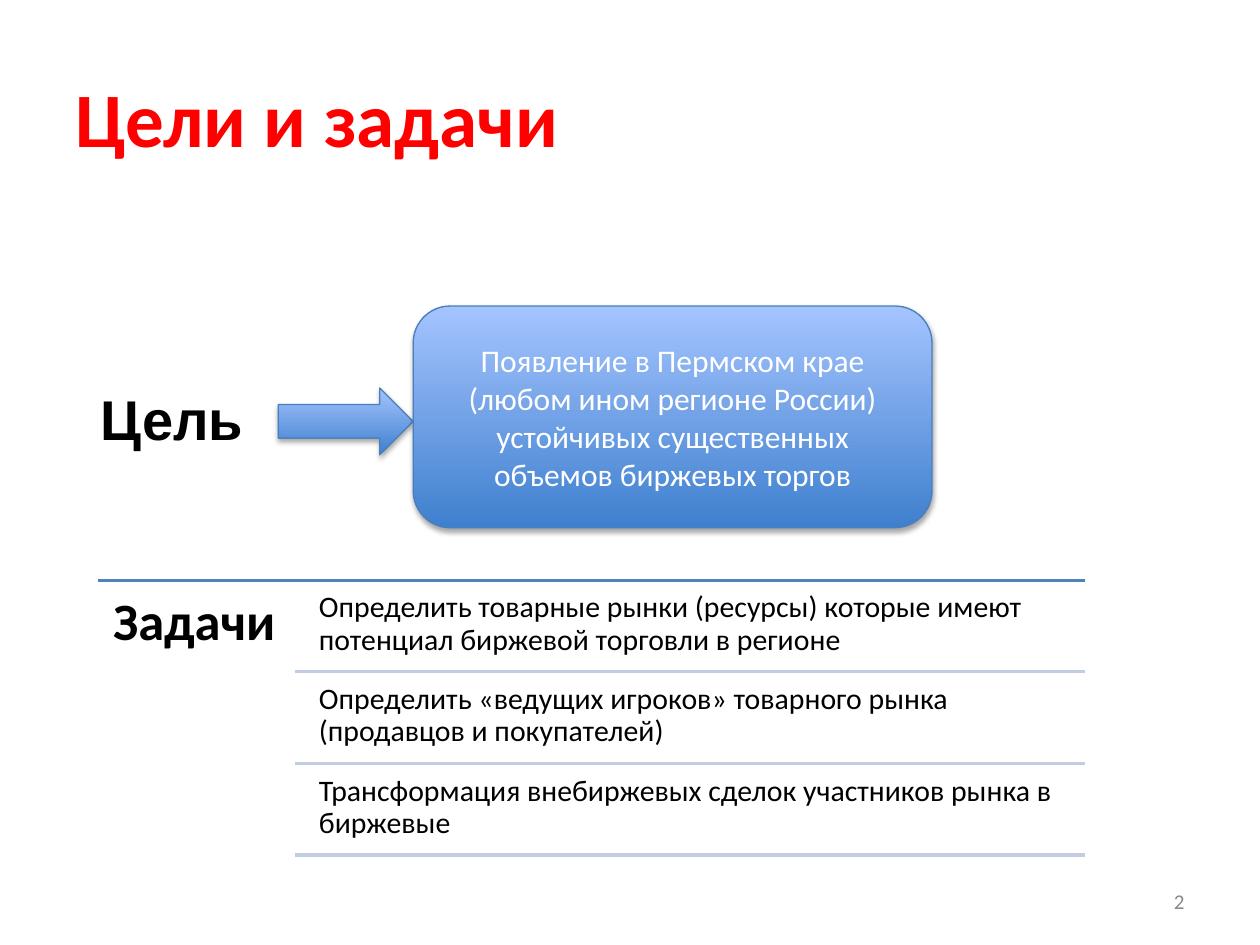
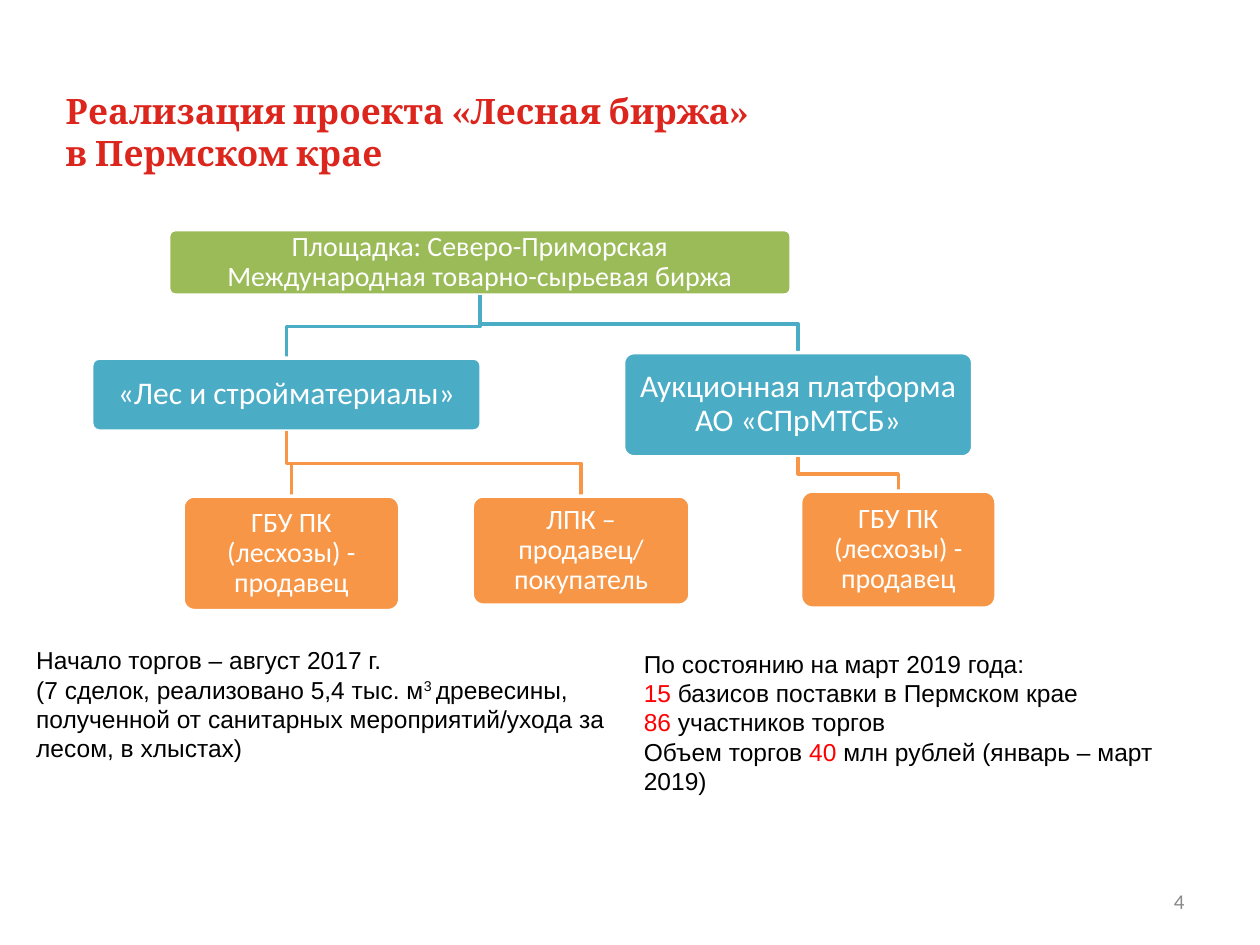
from lxml.etree import SubElement
from pptx import Presentation
from pptx.dml.color import RGBColor
from pptx.enum.shapes import MSO_CONNECTOR as Connector, MSO_SHAPE as Shape
from pptx.enum.text import MSO_ANCHOR as Anchor, PP_ALIGN as Align
from pptx.oxml.ns import qn
from pptx.util import Cm, Pt

RED = RGBColor(0xFF, 0x00, 0x00)
CRIMSON = RGBColor(0xDB, 0x25, 0x1D)
BLACK = RGBColor(0x00, 0x00, 0x00)
WHITE = RGBColor(0xFF, 0xFF, 0xFF)
GRAY = RGBColor(0x89, 0x89, 0x89)
BLUE = RGBColor(0x4F, 0x81, 0xBD)
PALE_BLUE = RGBColor(0xC2, 0xCD, 0xE1)
OUTLINE_BLUE = RGBColor(0x4B, 0x7E, 0xBC)
GRADIENT = RGBColor(0x3F, 0x80, 0xCE), RGBColor(0xA4, 0xC4, 0xFF)
GREEN = RGBColor(0x9B, 0xBB, 0x59)
TEAL = RGBColor(0x4B, 0xAC, 0xC6)
ORANGE = RGBColor(0xF7, 0x96, 0x46)

GOAL = ("Появление в Пермском крае (любом ином регионе России) "
        "устойчивых существенных объемов биржевых торгов")
TASKS = [
    "Определить товарные рынки (ресурсы) которые имеют потенциал биржевой торговли в регионе",
    "Определить «ведущих игроков» товарного рынка (продавцов и покупателей)",
    "Трансформация внебиржевых сделок участников рынка в биржевые",
]
TASK_PITCH = 1.85

SELLER = "ГБУ ПК (лесхозы) - продавец"
EXCHANGE_TREE = (
    "Площадка: Северо-Приморская\vМеждународная товарно-сырьевая биржа",
    (3.4, 4.63, 12.55, 1.32), GREEN, 16, [
        ("«Лес и стройматериалы»", (1.85, 7.22, 7.85, 1.47), TEAL, 18, [
            (SELLER, (3.69, 10, 4.37, 2.31), ORANGE, 16, []),
            ("ЛПК – продавец/\vпокупатель", (9.52, 10, 4.39, 2.2), ORANGE, 16, []),
        ]),
        ("Аукционная платформа\vАО «СПрМТСБ»", (12.57, 7.11, 7.04, 2.1), TEAL, 18, [
            (SELLER, (16.14, 9.9, 3.94, 2.36), ORANGE, 16, []),
        ]),
    ])

START_NOTE = [
    [("Начало торгов – август 2017 г.", "plain")],
    [("(7 сделок, реализовано 5,4 тыс. м", "plain"), ("3 ", "raised"),
     ("древесины, полученной от санитарных мероприятий/ухода за лесом, в хлыстах)", "plain")],
]
STATUS_NOTE = [
    [("По состоянию на март 2019 года:", "plain")],
    [("15", "red"), (" базисов поставки в Пермском крае", "plain")],
    [("86", "red"), (" участников торгов", "plain")],
    [("Объем торгов ", "plain"), ("40 ", "red"), ("млн рублей (январь – март 2019)", "plain")],
]


def cm_all(*lengths):
    return [Cm(length) for length in lengths]


def write(holder, text, size, color, font="Calibri", bold=False,
          align=Align.LEFT, anchor=Anchor.TOP, spacing=None, inset=None):
    frame = holder.text_frame
    frame.word_wrap = True
    frame.vertical_anchor = anchor
    if inset is not None:
        frame.margin_left = frame.margin_right = Cm(inset)
        frame.margin_top = frame.margin_bottom = Cm(inset)
    para = frame.paragraphs[0]
    para.text = text
    para.alignment = align
    para.line_spacing = spacing
    para.font.name, para.font.size = font, Pt(size)
    para.font.bold = bold
    para.font.color.rgb = color


def add_text(page, place, text, size, color, **style):
    write(page.shapes.add_textbox(*cm_all(*place)), text, size, color, **style)


def add_page(deck, number, title, place, size, color, font):
    page = deck.slides.add_slide(deck.slide_layouts[5])
    heading = page.shapes.title
    heading.left, heading.top, heading.width, heading.height = cm_all(*place)
    write(heading, title, size, color, font=font, bold=True, anchor=Anchor.MIDDLE)
    add_text(page, (18.21, 17.65, 5.92, 1.02), number, 12, GRAY,
             align=Align.RIGHT, anchor=Anchor.MIDDLE)
    return page


def add_rule(page, left, right, top, color):
    rule = page.shapes.add_connector(Connector.STRAIGHT, *cm_all(left, top, right, top))
    rule.line.color.rgb = color
    rule.line.width = Pt(2)
    SubElement(rule._element.spPr, qn("a:effectLst"))


def add_glossy(page, kind, place):
    shape = page.shapes.add_shape(kind, *cm_all(*place))
    shape.fill.gradient()
    shape.fill.gradient_angle = 90
    for stop, color in zip(shape.fill.gradient_stops, GRADIENT):
        stop.color.rgb = color
    shape.line.color.rgb = OUTLINE_BLUE
    shape.line.width = Pt(0.75)
    shape.shadow.inherit = False
    effects = shape._element.spPr.find(qn("a:effectLst"))
    shadow = SubElement(effects, qn("a:outerShdw"), blurRad="40000", dist="23000",
                        dir="5400000", rotWithShape="0")
    tint = SubElement(shadow, qn("a:srgbClr"), val="000000")
    SubElement(tint, qn("a:alpha"), val="35000")
    return shape


def add_branch(page, parent, place, color):
    left, top, width, _ = cm_all(*place)
    start_x, start_y = parent.left + parent.width // 2, parent.top + parent.height
    end_x, middle_y = left + width // 2, (start_y + top) // 2
    builder = page.shapes.build_freeform(start_x, start_y)
    builder.add_line_segments([(start_x, middle_y), (end_x, middle_y), (end_x, top)], close=False)
    branch = builder.convert_to_shape()
    branch.shadow.inherit = False
    branch.fill.background()
    branch.line.color.rgb = color
    branch.line.width = Pt(2)


def add_node(page, node, parent=None):
    text, place, color, size, children = node
    if parent is not None:
        add_branch(page, parent, place, color)
    box = page.shapes.add_shape(Shape.ROUNDED_RECTANGLE, *cm_all(*place))
    box.adjustments[0] = 0.1
    box.shadow.inherit = False
    box.fill.solid()
    box.fill.fore_color.rgb = color
    box.line.color.rgb = WHITE
    box.line.width = Pt(2)
    write(box, text, size, WHITE, align=Align.CENTER, anchor=Anchor.MIDDLE,
          spacing=0.9, inset=0.18)
    for child in children:
        add_node(page, child, box)


def add_note(page, place, lines):
    frame = page.shapes.add_textbox(*cm_all(*place)).text_frame
    frame.word_wrap = True
    for index, line in enumerate(lines):
        para = frame.add_paragraph() if index else frame.paragraphs[0]
        para.font.name, para.font.size = "Arial", Pt(14)
        for text, style in line:
            span = para.add_run()
            span.text = text
            span.font.color.rgb = RED if style == "red" else BLACK
            if style == "raised":
                span._r.get_or_add_rPr().set("baseline", "30000")


def build_goals(deck):
    page = add_page(deck, "2", "Цели и задачи", (1.27, 0.76, 22.86, 3.18), 44, RED, "Calibri")
    add_glossy(page, Shape.RIGHT_ARROW, (5.61, 7.82, 2.72, 1.35))
    add_text(page, (1.78, 7.62, 3.84, 1.62), "Цель", 32, BLACK, font="Arial", bold=True)
    goal = add_glossy(page, Shape.ROUNDED_RECTANGLE, (8.33, 6.17, 10.46, 4.47))
    write(goal, GOAL, 18, WHITE, align=Align.CENTER, anchor=Anchor.MIDDLE)
    add_rule(page, 1.98, 21.87, 11.7, BLUE)
    add_text(page, (1.98, 11.7, 3.99, 5.64), "Задачи", 30, BLACK,
             bold=True, spacing=0.9, inset=0.3)
    for index, task in enumerate(TASKS):
        top = 11.76 + index * TASK_PITCH
        add_text(page, (6.25, top, 15.62, 1.75), task, 17, BLACK, spacing=0.9, inset=0.18)
        add_rule(page, 5.94, 21.87, top + 1.78, PALE_BLUE)


def build_project(deck):
    page = add_page(deck, "4", "Реализация проекта «Лесная биржа»\vв Пермском крае",
                    (1.07, 1.07, 22.86, 3.18), 20, CRIMSON, "Cambria")
    add_node(page, EXCHANGE_TREE)
    add_note(page, (0.48, 12.88, 13.26, 2.64), START_NOTE)
    add_note(page, (12.73, 12.95, 12.04, 3.84), STATUS_NOTE)


def main():
    deck = Presentation()
    deck.slide_width, deck.slide_height = Cm(25.4), Cm(19.05)
    build_goals(deck)
    build_project(deck)
    deck.save("out.pptx")


if __name__ == "__main__":
    main()
